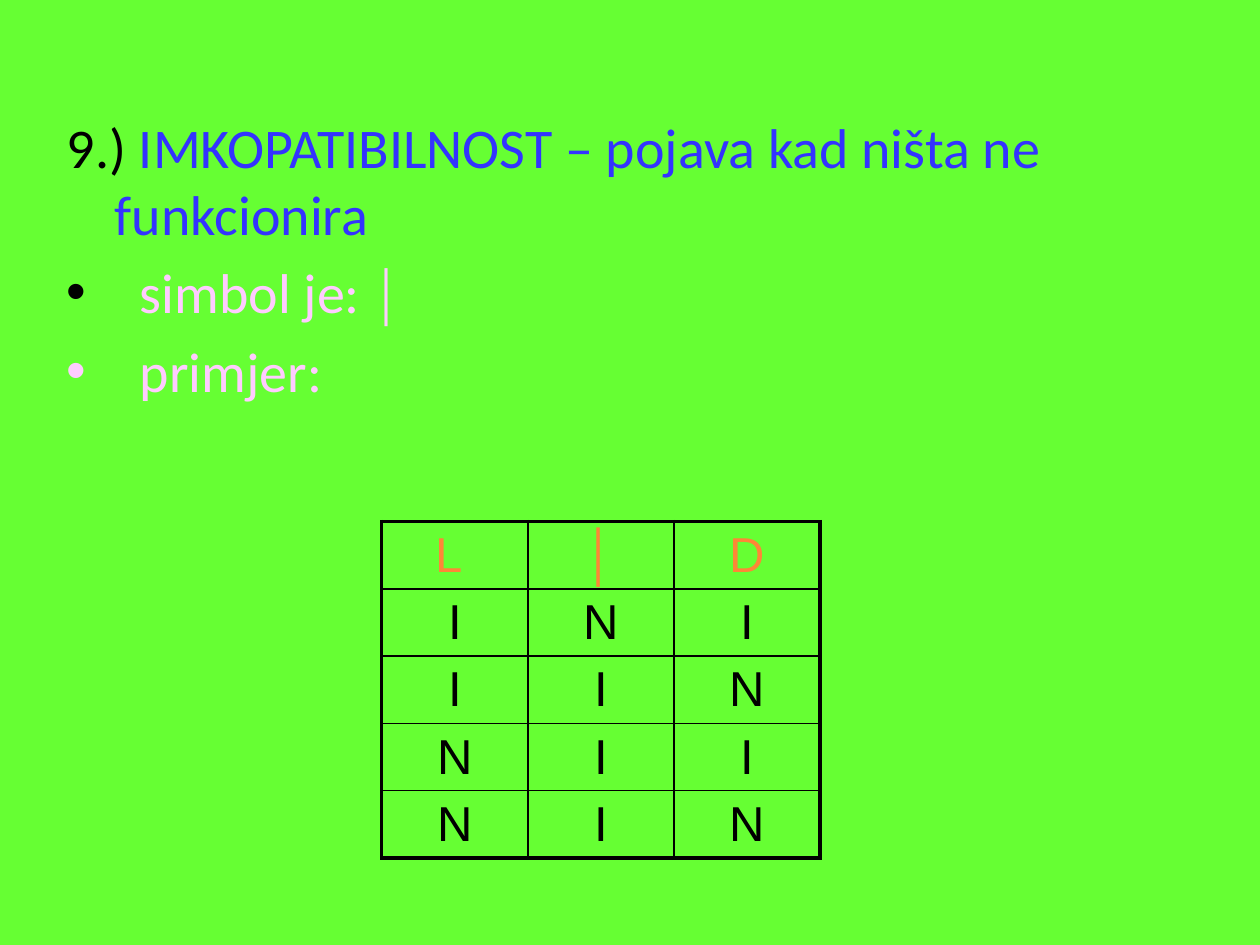
from dataclasses import dataclass

from lxml import etree
from pptx import Presentation
from pptx import util as u
from pptx.dml.color import RGBColor
from pptx.enum import text
from pptx.oxml.ns import qn

GREEN = RGBColor(0x66, 0xFF, 0x33)
BLACK = RGBColor(0, 0, 0)
BLUE = RGBColor(0x33, 0x33, 0xFF)
PINK = RGBColor(0xFF, 0xCC, 0xFF)
ORANGE = RGBColor(0xFE, 0x86, 0x37)

THIN, THICK = 1, 2.25
COLUMN_WIDTH, ROW_HEIGHT = u.Inches(1.16), u.Inches(0.53)


@dataclass
class Line:
    runs: list[tuple[str, RGBColor]]
    indent: float
    bullet: RGBColor | None = None


LINES = [
    Line([("9.) ", BLACK),
          ("IMKOPATIBILNOST – pojava kad ništa ne funkcionira", BLUE)], 0.38),
    Line([("simbol je: │", PINK)], 0.58, BLACK),
    Line([("primjer:", PINK)], 0.58, PINK),
]
TRUTH_TABLE = [("L ", "│", "D"), *("INI", "IIN", "NII", "NIN")]


def add_run(paragraph, wording: str, font: str, size: float, color: RGBColor) -> None:
    run = paragraph.add_run()
    run.text = wording
    run.font.name = font
    run.font.size = u.Pt(size)
    run.font.color.rgb = color


def write_line(paragraph, line: Line) -> None:
    properties = paragraph._p.get_or_add_pPr()
    properties.set("marL", str(u.Inches(line.indent)))
    properties.set("indent", str(-u.Inches(line.indent)))
    if line.bullet is None:
        etree.SubElement(properties, qn("a:buNone"))
    else:
        bullet_color = etree.SubElement(properties, qn("a:buClr"))
        etree.SubElement(bullet_color, qn("a:srgbClr"), val=str(line.bullet))
        etree.SubElement(properties, qn("a:buFont"), typeface="Arial")
        etree.SubElement(properties, qn("a:buChar"), char="•")
    for wording, color in line.runs:
        add_run(paragraph, wording, "Calibri", 32, color)


def set_borders(cell, widths: dict[str, float]) -> None:
    properties = cell._tc.get_or_add_tcPr()
    for position, (side, width) in enumerate(widths.items()):
        border = etree.Element(qn(f"a:ln{side}"), w=str(u.Pt(width)))
        fill = etree.SubElement(border, qn("a:solidFill"))
        etree.SubElement(fill, qn("a:srgbClr"), val=str(BLACK))
        properties.insert(position, border)


def add_truth_table(slide, rows: list) -> None:
    last_row, last_column = len(rows) - 1, len(rows[0]) - 1
    table = slide.shapes.add_table(
        len(rows), len(rows[0]), u.Inches(3.03), u.Inches(4.14),
        COLUMN_WIDTH * len(rows[0]), ROW_HEIGHT * len(rows)).table
    table.first_row = table.horz_banding = False
    for column in table.columns:
        column.width = COLUMN_WIDTH
    for r, values in enumerate(rows):
        table.rows[r].height = ROW_HEIGHT
        for c, value in enumerate(values):
            cell = table.cell(r, c)
            cell.fill.background()
            set_borders(cell, {
                "L": THICK if c == 0 else THIN,
                "R": THICK if c == last_column else THIN,
                "T": THICK if r == 0 else THIN,
                "B": THICK if r == last_row else THIN,
            })
            paragraph = cell.text_frame.paragraphs[0]
            paragraph.alignment = text.PP_ALIGN.CENTER
            add_run(paragraph, value, "Arial", 28, ORANGE if r == 0 else BLACK)


def main() -> None:
    deck = Presentation()
    deck.slide_width, deck.slide_height = u.Inches(10), u.Inches(7.5)
    slide = deck.slides.add_slide(deck.slide_layouts[1])
    slide.background.fill.solid()
    slide.background.fill.fore_color.rgb = GREEN

    # The slide has no title, only body text
    title = slide.shapes.title
    title.element.getparent().remove(title.element)

    # Definition, symbol and example
    body = slide.placeholders[1]
    body.left, body.top = u.Inches(0.43), u.Inches(0.84)
    body.width, body.height = u.Inches(9), u.Inches(4.95)
    frame = body.text_frame
    for i, line in enumerate(LINES):
        write_line(frame.add_paragraph() if i else frame.paragraphs[0], line)

    # Truth table of the example
    add_truth_table(slide, TRUTH_TABLE)
    deck.save("out.pptx")


if __name__ == "__main__":
    main()
